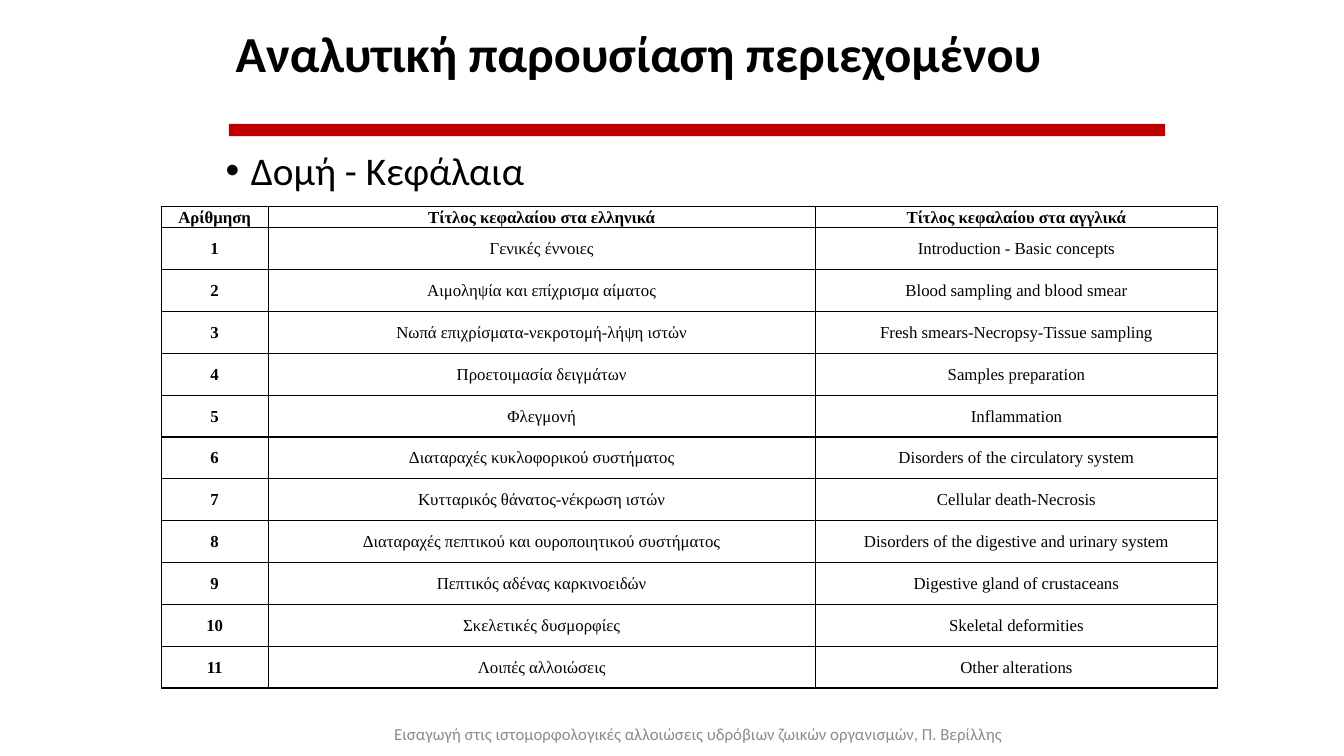
from dataclasses import dataclass

from lxml import etree
from pptx import Presentation
from pptx.dml.color import RGBColor
from pptx.enum.shapes import MSO_SHAPE
from pptx.enum.text import MSO_ANCHOR, PP_ALIGN
from pptx.oxml.ns import qn
from pptx.slide import Slide
from pptx.table import _Cell
from pptx.text.text import _Paragraph
from pptx.util import Pt

RECTANGLE = MSO_SHAPE.RECTANGLE
TOP, MIDDLE = MSO_ANCHOR.TOP, MSO_ANCHOR.MIDDLE
LEFT, CENTER = PP_ALIGN.LEFT, PP_ALIGN.CENTER


@dataclass(frozen=True)
class Theme:
    heading_font: str = "Calibri"
    table_font: str = "Times New Roman"
    black: RGBColor = RGBColor(0x00, 0x00, 0x00)
    white: RGBColor = RGBColor(0xFF, 0xFF, 0xFF)
    red: RGBColor = RGBColor(0xC0, 0x00, 0x00)
    grey: RGBColor = RGBColor(0x8C, 0x8C, 0x8C)
    title_size: float = 36
    body_size: float = 28
    small_size: float = 12


THEME = Theme()


@dataclass(frozen=True)
class Box:
    left: float
    top: float
    width: float
    height: float

    def lengths(self) -> tuple[Pt, Pt, Pt, Pt]:
        return Pt(self.left), Pt(self.top), Pt(self.width), Pt(self.height)


@dataclass(frozen=True)
class Label:
    text: str
    box: Box
    size: float
    color: RGBColor = THEME.black
    bold: bool = False
    anchor: MSO_ANCHOR = MIDDLE
    align: PP_ALIGN = LEFT
    line_spacing: float = 0.9
    bulleted: bool = False


@dataclass(frozen=True)
class Chapter:
    greek: str
    english: str


LABELS = [
    Label("Αναλυτική παρουσίαση περιεχομένου", Box(161.28, -5.04, 828, 90.72),
          THEME.title_size, bold=True),
    Label("Δομή - Κεφάλαια", Box(154.08, 104.4, 730.8, 246.24),
          THEME.body_size, anchor=TOP, bulleted=True),
    Label("Εισαγωγή στις ιστομορφολογικές αλλοιώσεις υδρόβιων ζωικών οργανισμών, Π. Βερίλλης",
          Box(268.56, 509.76, 460.8, 28.8), THEME.small_size,
          color=THEME.grey, align=CENTER, line_spacing=1.0),
]

HEADINGS = ("Αρίθμηση", "Τίτλος κεφαλαίου στα ελληνικά", "Τίτλος κεφαλαίου στα αγγλικά")
CHAPTERS = [
    Chapter("Γενικές έννοιες", "Introduction - Basic concepts"),
    Chapter("Αιμοληψία και επίχρισμα αίματος", "Blood sampling and blood smear"),
    Chapter("Νωπά επιχρίσματα-νεκροτομή-λήψη ιστών", "Fresh smears-Necropsy-Tissue sampling"),
    Chapter("Προετοιμασία δειγμάτων", "Samples preparation"),
    Chapter("Φλεγμονή", "Inflammation"),
    Chapter("Διαταραχές κυκλοφορικού συστήματος", "Disorders of the circulatory system"),
    Chapter("Κυτταρικός θάνατος-νέκρωση ιστών", "Cellular death-Necrosis"),
    Chapter("Διαταραχές πεπτικού και ουροποιητικού συστήματος",
            "Disorders of the digestive and urinary system"),
    Chapter("Πεπτικός αδένας καρκινοειδών", "Digestive gland of crustaceans"),
    Chapter("Σκελετικές δυσμορφίες", "Skeletal deformities"),
    Chapter("Λοιπές αλλοιώσεις", "Other alterations"),
]

RULE_BOX = Box(163.44, 88.56, 668.88, 8.64)
TABLE_LEFT, TABLE_TOP = 115.2, 147.6
COLUMN_WIDTHS = (76.32, 390.96, 287.28)
HEADER_HEIGHT, CHAPTER_HEIGHT = 13.68, 29.9
BULLET_INDENT = 18
CELL_MARGIN = 5


def style_paragraph(paragraph: _Paragraph, font_name: str, size: float,
                    color: RGBColor, bold: bool) -> None:
    font = paragraph.font
    font.name = font_name
    font.size = Pt(size)
    font.bold = bold
    font.color.rgb = color


def add_bullet(paragraph: _Paragraph) -> None:
    properties = paragraph._p.get_or_add_pPr()
    properties.set("marL", str(Pt(BULLET_INDENT)))
    properties.set("indent", str(-Pt(BULLET_INDENT)))
    etree.SubElement(properties, qn("a:buFont"), typeface="Arial")
    etree.SubElement(properties, qn("a:buChar"), char="•")


def add_label(slide: Slide, label: Label) -> None:
    frame = slide.shapes.add_textbox(*label.box.lengths()).text_frame
    frame.word_wrap = True
    frame.vertical_anchor = label.anchor
    paragraph = frame.paragraphs[0]
    paragraph.text = label.text
    paragraph.alignment = label.align
    paragraph.line_spacing = label.line_spacing
    if label.bulleted:
        add_bullet(paragraph)
    style_paragraph(paragraph, THEME.heading_font, label.size, label.color, label.bold)


def add_rule(slide: Slide) -> None:
    """Draw the red bar under the title."""
    rule = slide.shapes.add_shape(RECTANGLE, *RULE_BOX.lengths())
    rule.shadow.inherit = False
    rule.fill.solid()
    rule.fill.fore_color.rgb = THEME.red
    rule.line.fill.background()


def add_borders(cell: _Cell) -> None:
    properties = cell._tc.get_or_add_tcPr()
    for position, side in enumerate(("lnL", "lnR", "lnT", "lnB")):
        line = etree.Element(qn(f"a:{side}"), w=str(Pt(1)))
        fill = etree.SubElement(line, qn("a:solidFill"))
        etree.SubElement(fill, qn("a:srgbClr"), val=str(THEME.black))
        properties.insert(position, line)


def fill_cell(cell: _Cell, text: str, bold: bool) -> None:
    cell.fill.solid()
    cell.fill.fore_color.rgb = THEME.white
    add_borders(cell)
    cell.vertical_anchor = MIDDLE
    cell.margin_left = cell.margin_right = Pt(CELL_MARGIN)
    cell.margin_top = cell.margin_bottom = Pt(0)
    paragraph = cell.text_frame.paragraphs[0]
    paragraph.text = text
    paragraph.alignment = CENTER
    paragraph.line_spacing = 1.05
    style_paragraph(paragraph, THEME.table_font, THEME.small_size, THEME.black, bold)


def add_chapter_table(slide: Slide) -> None:
    rows = [HEADINGS] + [(str(number), chapter.greek, chapter.english)
                         for number, chapter in enumerate(CHAPTERS, start=1)]
    box = Box(TABLE_LEFT, TABLE_TOP, sum(COLUMN_WIDTHS),
              HEADER_HEIGHT + CHAPTER_HEIGHT * len(CHAPTERS))
    table = slide.shapes.add_table(len(rows), len(HEADINGS), *box.lengths()).table
    table.first_row = table.horz_banding = False
    for column, width in zip(table.columns, COLUMN_WIDTHS):
        column.width = Pt(width)
    for row_index, texts in enumerate(rows):
        table.rows[row_index].height = Pt(CHAPTER_HEIGHT if row_index else HEADER_HEIGHT)
        for column_index, text in enumerate(texts):
            is_heading = row_index == 0 or column_index == 0
            fill_cell(table.cell(row_index, column_index), text, is_heading)


def main() -> None:
    presentation = Presentation()
    presentation.slide_width, presentation.slide_height = Pt(960), Pt(540)
    slide = presentation.slides.add_slide(presentation.slide_layouts[6])
    add_rule(slide)
    for label in LABELS:
        add_label(slide, label)
    add_chapter_table(slide)
    presentation.save("out.pptx")


if __name__ == "__main__":
    main()
